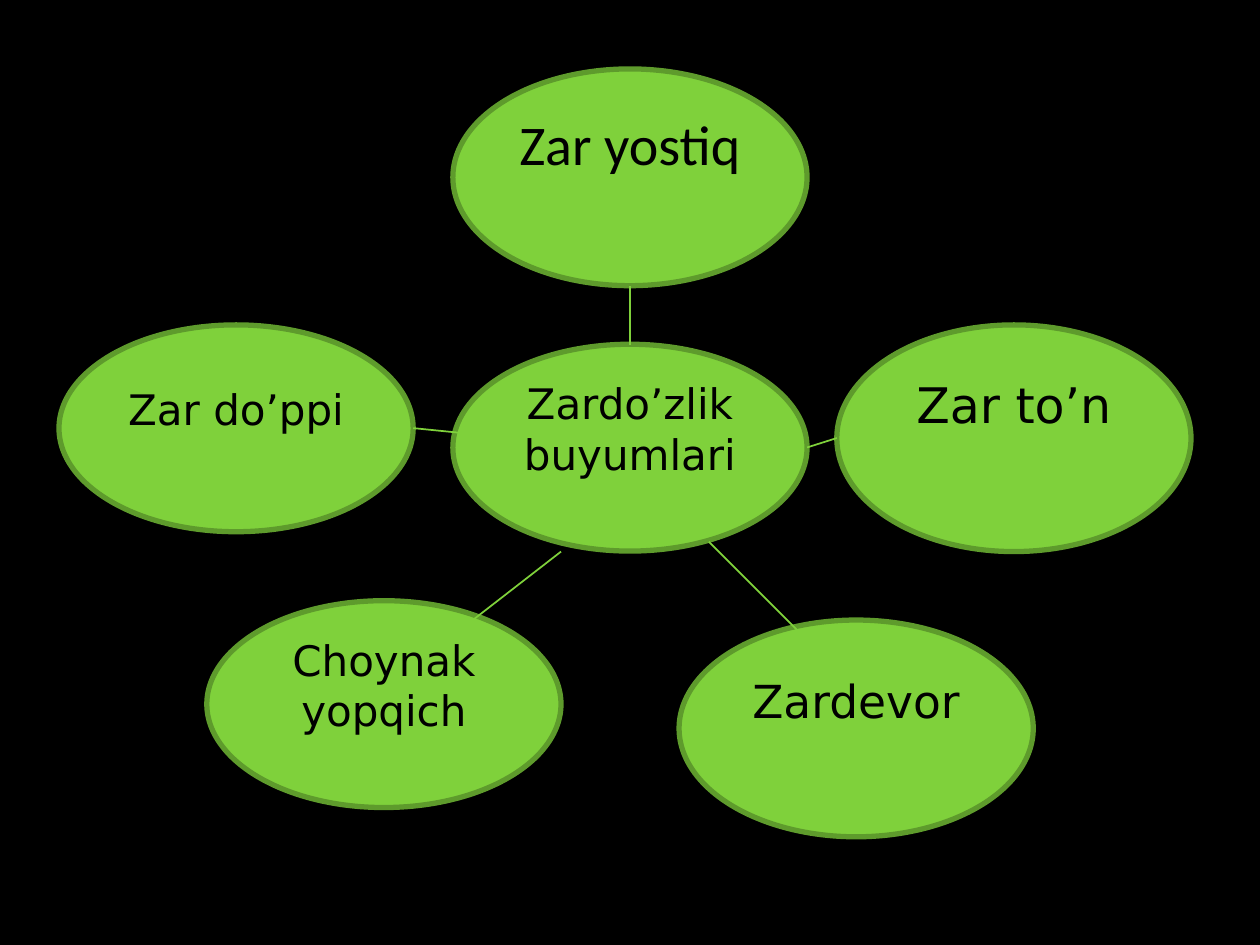
from pptx import Presentation
from pptx.dml.color import RGBColor
from pptx.enum import shapes, text
from pptx.oxml import xmlchemy
from pptx.util import Cm, Pt

GREEN, DARK_GREEN, BLACK = "7FD13B", "5E9B2C", "000000"
OVAL_WIDTH = 7.14
LINE_HEIGHT = 1.22

# label, font, size, size of the free line below, left, top, height (cm)
OVALS = [
    ("Choynak yopqich", "DejaVu Sans", 24, 18, 4.17, 12.11, 4.17),
    ("Zardevor", "DejaVu Sans", 26, 26, 13.69, 12.5, 4.37),
    ("Zar do’ppi", "DejaVu Sans", 24, 18, 1.19, 6.55, 4.17),
    ("Zar to’n", "DejaVu Sans", 28, 32, 16.87, 6.55, 4.57),
    ("Zardo’zlik buyumlari", "DejaVu Sans", 24, 18, 9.13, 6.94, 4.17),
    ("Zar yostiq", "Calibri", 32, 32, 9.13, 1.39, 4.37),
]

# x and y of both ends (cm)
SPOKES = [
    (12.7, 6.95, 12.7, 5.77),
    (16.27, 9.02, 16.87, 8.83),
    (14.29, 10.92, 16.07, 12.7),
    (11.31, 11.12, 9.53, 12.5),
    (8.33, 8.63, 9.33, 8.73),
]


def color(hex_string):
    return RGBColor.from_string(hex_string)


def add_oval(slide, label, font, size, free_line, left, top, height):
    shape = slide.shapes.add_shape(
        shapes.MSO_SHAPE.OVAL, Cm(left), Cm(top), Cm(OVAL_WIDTH), Cm(height))
    shape.shadow.inherit = False
    shape.fill.solid()
    shape.fill.fore_color.rgb = color(GREEN)
    shape.line.color.rgb = color(DARK_GREEN)
    shape.line.width = Pt(3)

    # The bottom inset lifts the label by half a line
    frame = shape.text_frame
    frame.word_wrap = True
    frame.vertical_anchor = text.MSO_ANCHOR.MIDDLE
    frame.margin_bottom = Pt(3.6 + free_line * LINE_HEIGHT)
    paragraph = frame.paragraphs[0]
    paragraph.alignment = text.PP_ALIGN.CENTER
    run = paragraph.add_run()
    run.text = label
    run.font.name = font
    run.font.size = Pt(size)
    run.font.color.rgb = color(BLACK)


def add_spoke(slide, *ends):
    connector = slide.shapes.add_connector(
        shapes.MSO_CONNECTOR.STRAIGHT, *(Cm(value) for value in ends))
    connector.line.color.rgb = color(GREEN)
    connector.line.width = Pt(1)
    properties = connector._element.spPr
    properties.append(xmlchemy.OxmlElement("a:effectLst"))


def build_mind_map(slide):
    for oval in OVALS:
        add_oval(slide, *oval)
    for spoke in SPOKES:
        add_spoke(slide, *spoke)


def main():
    presentation = Presentation()
    presentation.slide_width, presentation.slide_height = Cm(25.4), Cm(19.05)
    slide = presentation.slides.add_slide(presentation.slide_layouts[6])

    # Black background
    background = slide.background.fill
    background.solid()
    background.fore_color.rgb = color(BLACK)

    build_mind_map(slide)
    presentation.save("out.pptx")


if __name__ == "__main__":
    main()
